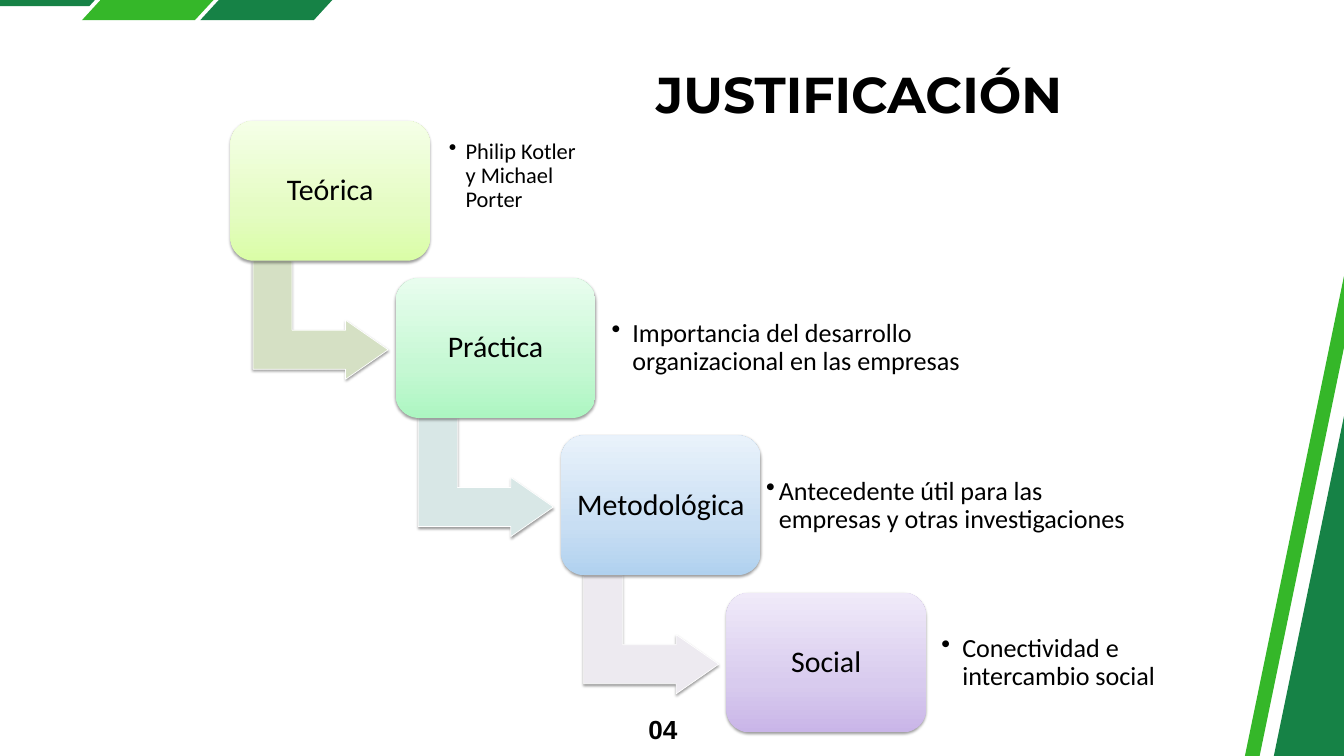
from copy import deepcopy

from lxml import etree
from pptx import Presentation
from pptx import util as u
from pptx.dml.color import RGBColor
from pptx.enum import shapes, text
from pptx.oxml import ns

PX = 9144
color = RGBColor.from_string


def write(shape, words, size, margin, font="Calibri", bold=False,
          align=text.PP_ALIGN.LEFT, anchor=text.MSO_ANCHOR.MIDDLE, spacing=0.9, indent=0):
    frame = shape.text_frame
    formats = {"word_wrap": True, "auto_size": text.MSO_AUTO_SIZE.NONE, "vertical_anchor": anchor}
    for side in ("left", "top", "right", "bottom"):
        formats[f"margin_{side}"] = margin * PX
    for name, value in formats.items():
        setattr(frame, name, value)
    paragraph = frame.paragraphs[0]
    if indent:
        paragraph.level = 1
        properties = paragraph._p.get_or_add_pPr()
        properties.set("marL", str(indent * PX))
        properties.set("indent", str(-indent * PX))
        etree.SubElement(properties, ns.qn("a:buChar"), char="•")
    paragraph.alignment = align
    paragraph.line_spacing = spacing
    run = paragraph.add_run()
    run.text = words
    for name, value in {"name": font, "size": u.Pt(size), "bold": bold}.items():
        setattr(run.font, name, value)
    run.font.color.rgb = color("000000")


def add_shadow(shape):
    shape.shadow.inherit = False
    effects = shape._element.spPr.find(ns.qn("a:effectLst"))
    shadow = etree.SubElement(effects, ns.qn("a:outerShdw"), blurRad=str(u.Pt(3.1)),
                              dist=str(u.Pt(1.6)), dir="5400000", rotWithShape="0")
    black = etree.SubElement(shadow, ns.qn("a:srgbClr"), val="000000")
    etree.SubElement(black, ns.qn("a:alpha"), val="38000")


presentation = Presentation()
presentation.slide_width = 2000 * PX
presentation.slide_height = 1125 * PX
slide = presentation.slides.add_slide(presentation.slide_layouts[5])

bands = [
    ("168246", [(-179, -83), (217, -83), (133, 9), (-263, 9)]),
    ("35B729", [(244, -103), (413, -103), (290, 30), (122, 30)]),
    ("168246", [(420, -103), (589, -103), (467, 30), (298, 30)]),
    ("168246", [(1813, 1525), (2145, -83), (2601, 12), (2269, 1619)]),
    ("35B729", [(1770, 1525), (2102, -83), (2123, -78), (1791, 1529)]),
]
for fill, points in bands:
    builder = slide.shapes.build_freeform(*points[0], scale=PX)
    builder.add_line_segments(points[1:], close=True)
    band = builder.convert_to_shape()
    band.shadow.inherit = False
    band.fill.solid()
    band.fill.fore_color.rgb = color(fill)
    band.line.fill.background()

title = slide.shapes.title
for name, value in {"left": 902, "top": 94, "width": 753, "height": 91}.items():
    setattr(title, name, value * PX)
write(title, "JUSTIFICACIÓN", 54, 0, "Montserrat", True,
      text.PP_ALIGN.CENTER, text.MSO_ANCHOR.TOP, 1.0)

number = slide.shapes.add_textbox(952 * PX, 1054 * PX, 56 * PX, 50 * PX)
write(number, "04", 28, 0, "Arial", True,
      text.PP_ALIGN.RIGHT, text.MSO_ANCHOR.TOP, u.Pt(39.2))

steps = [
    ("Teórica", ("DAFDA7", "E4FCC2", "F5FFE7"), "D5E0C4"),
    ("Práctica", ("ACF6C1", "C5F8D3", "E8FDEE"), "D8E7E6"),
    ("Metodológica", ("B0D1EF", "C8DEF3", "E9F2FB"), "EDEAF0"),
    ("Social", ("C9B5E8", "D8CBEE", "F0EAF9"), None),
]
for index, (label, gradient, arrow_fill) in enumerate(steps):
    left, top = 343 + 246 * index, 180 + 234 * index
    if arrow_fill:
        arrow = slide.shapes.add_shape(shapes.MSO_SHAPE.BENT_UP_ARROW, (left + 46) * PX,
                                       (top + 196) * PX, 176 * PX, 201 * PX)
        arrow.rotation = 90
        for position, value in enumerate((0.33, 0.25, 0.36)):
            arrow.adjustments[position] = value
        arrow.fill.solid()
        arrow.fill.fore_color.rgb = color(arrow_fill)
        arrow.line.color.rgb = color("FFFFFF")
        arrow.line.width = u.Pt(0.75)
        add_shadow(arrow)

    box = slide.shapes.add_shape(shapes.MSO_SHAPE.ROUNDED_RECTANGLE,
                                 left * PX, top * PX, 297 * PX, 208 * PX)
    box.fill.gradient()
    box.fill.gradient_angle = 90
    stop_list = box._element.spPr.find(".//" + ns.qn("a:gsLst"))
    stop_list.append(deepcopy(stop_list[0]))
    for stop, position, fill in zip(box.fill.gradient_stops, (0, 0.35, 1), gradient):
        stop.position = position
        stop.color.rgb = color(fill)
    box.line.fill.background()
    add_shadow(box)
    write(box, label, 32, 13, align=text.PP_ALIGN.CENTER)

details = [
    ("Philip Kotler y Michael Porter", 24, 10, 25, (658, 178, 216, 168)),
    ("Importancia del desarrollo organizacional en las empresas", 28, 15, 31, (895, 434, 652, 168)),
    ("Antecedente útil para las empresas y otras investigaciones", 28, 9, 19, (1131, 712, 572, 81)),
    ("Conectividad e intercambio social", 28, 12, 31, (1389, 903, 373, 168)),
]
for words, size, margin, indent, place in details:
    detail = slide.shapes.add_textbox(*(value * PX for value in place))
    write(detail, words, size, margin, indent=indent)

presentation.save("out.pptx")
